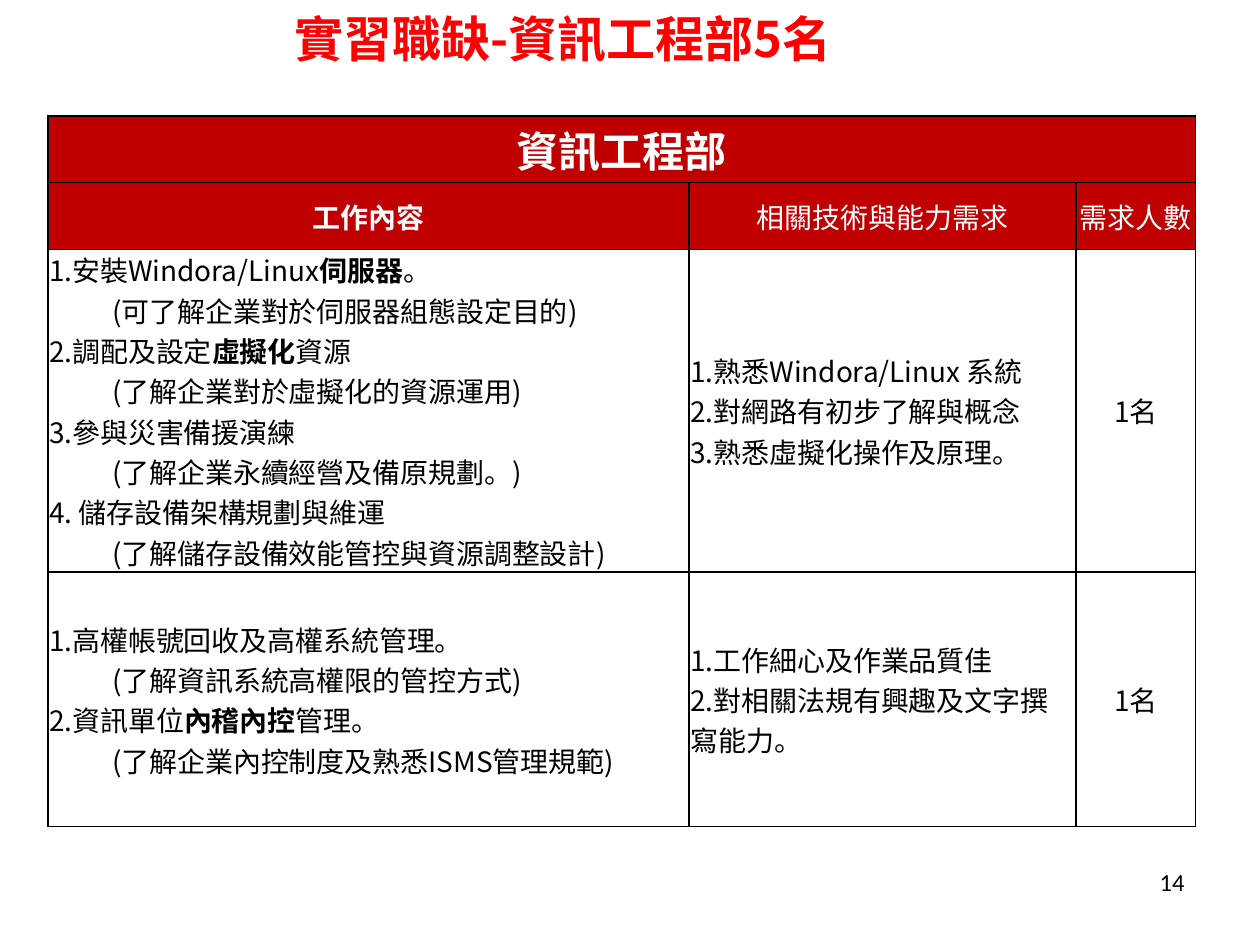
import pptx
import pptx.dml.color
import pptx.enum.text
import pptx.oxml
import pptx.oxml.ns
import pptx.util
from pptx.util import Inches

ALIGN = pptx.enum.text.PP_ALIGN
MIDDLE = pptx.enum.text.MSO_ANCHOR.MIDDLE

HEADERS = ["*工作內容*", "相關技術與能力需求", "需求人數"]
# Asterisks enclose bold words; a leading ">" marks an indented line.
JOBS = [
    (
        [
            "1.安裝Windora/Linux*伺服器*。",
            ">(可了解企業對於伺服器組態設定目的)",
            "2.調配及設定*虛擬化*資源",
            ">(了解企業對於虛擬化的資源運用)",
            "3.參與災害備援演練",
            ">(了解企業永續經營及備原規劃。)",
            "4. 儲存設備架構規劃與維運",
            ">(了解儲存設備效能管控與資源調整設計)",
        ],
        ["1.熟悉Windora/Linux 系統", "2.對網路有初步了解與概念", "3.熟悉虛擬化操作及原理。"],
        "1名",
    ),
    (
        [
            "1.高權帳號回收及高權系統管理。",
            ">(了解資訊系統高權限的管控方式)",
            "2.資訊單位*內稽內控*管理。",
            ">(了解企業內控制度及熟悉ISMS管理規範)",
        ],
        ["1.工作細心及作業品質佳", "2.對相關法規有興趣及文字撰寫能力。"],
        "1名",
    ),
]


def color(value):
    return pptx.dml.color.RGBColor.from_string(value)


class SlideBuilder:
    FONT = "Noto Sans CJK SC"
    RED, DARK_RED, BLACK, WHITE = "FF0000", "C00000", "000000", "FFFFFF"

    def __init__(self, presentation):
        self.slide = presentation.slides.add_slide(presentation.slide_layouts[5])

    def add_runs(self, paragraph, text, size, text_color, font=FONT):
        """Add runs, switching bold on and off at each asterisk."""
        for index, part in enumerate(text.split("*")):
            if not part:
                continue
            run = paragraph.add_run()
            run.text = part
            run.font.size = pptx.util.Pt(size)
            run.font.bold = index % 2 == 1
            run.font.name = font
            run.font.color.rgb = color(text_color)
            east_asian = pptx.oxml.parse_xml(
                f'<a:ea {pptx.oxml.ns.nsdecls("a")} typeface="{font}"/>')
            run.font._element.find(pptx.oxml.ns.qn("a:latin")).addnext(east_asian)

    def title(self, text, left, top, width, height):
        shape = self.slide.shapes.title
        shape.left, shape.top = Inches(left), Inches(top)
        shape.width, shape.height = Inches(width), Inches(height)
        shape.text_frame.vertical_anchor = MIDDLE
        paragraph = shape.text_frame.paragraphs[0]
        paragraph.alignment = ALIGN.LEFT
        self.add_runs(paragraph, text, 28, self.RED)

    def page_number(self, text, *box):
        shape = self.slide.shapes.add_textbox(*map(Inches, box))
        shape.text_frame.word_wrap = True
        paragraph = shape.text_frame.paragraphs[0]
        paragraph.alignment = ALIGN.RIGHT
        self.add_runs(paragraph, text, 14, self.BLACK, "Calibri")

    def table(self, left, top, widths, heights):
        table = self.slide.shapes.add_table(
            len(heights), len(widths), Inches(left), Inches(top),
            Inches(sum(widths)), Inches(sum(heights))).table
        table.first_row = table.horz_banding = False
        for column, width in zip(table.columns, widths):
            column.width = Inches(width)
        for row, height in zip(table.rows, heights):
            row.height = Inches(height)
        for cell in table.iter_cells():
            self.borders(cell)
            cell.fill.background()
        return table

    def borders(self, cell):
        properties = cell._tc.get_or_add_tcPr()
        for side in ("lnL", "lnR", "lnT", "lnB"):
            properties.append(pptx.oxml.parse_xml(
                f'<a:{side} {pptx.oxml.ns.nsdecls("a")} w="12700"><a:solidFill>'
                f'<a:srgbClr val="{self.BLACK}"/></a:solidFill></a:{side}>'))

    def cell(self, cell, lines, size=16, text_color=BLACK, fill=None,
             align=ALIGN.LEFT, margin=0.01):
        cell.vertical_anchor = MIDDLE
        cell.margin_left = cell.margin_right = Inches(margin)
        cell.margin_top = cell.margin_bottom = 0
        if fill:
            cell.fill.solid()
            cell.fill.fore_color.rgb = color(fill)
        frame = cell.text_frame
        for index, line in enumerate(lines):
            paragraph = frame.add_paragraph() if index else frame.paragraphs[0]
            paragraph.alignment = align
            if line.startswith(">"):
                paragraph.level = 1
                properties = paragraph._p.get_or_add_pPr()
                properties.set("marL", str(Inches(0.5)))
                properties.set("indent", "0")
            self.add_runs(paragraph, line.lstrip(">"), size, text_color)

    def header_cell(self, cell, text, size=16):
        self.cell(cell, [text], size, self.WHITE, self.DARK_RED, ALIGN.CENTER, 0.02)


def main():
    presentation = pptx.Presentation()
    presentation.slide_width, presentation.slide_height = Inches(10), Inches(7.5)
    builder = SlideBuilder(presentation)
    builder.title("*實習職缺-資訊工程部5名*", 2.24, 0, 7.48, 0.6)

    table = builder.table(0.38, 0.92, [5.09, 3.07, 0.95], [0.53, 0.53, 2.02, 2.02])
    table.cell(0, 0).merge(table.cell(0, 2))
    builder.header_cell(table.cell(0, 0), "*資訊工程部*", 24)
    for column, header in enumerate(HEADERS):
        builder.header_cell(table.cell(1, column), header)
    for row, (duties, skills, openings) in enumerate(JOBS, start=2):
        builder.cell(table.cell(row, 0), duties)
        builder.cell(table.cell(row, 1), skills)
        builder.cell(table.cell(row, 2), [openings], align=ALIGN.CENTER, margin=0.02)

    builder.page_number("14", 7.17, 6.83, 2.33, 0.52)
    presentation.save("out.pptx")


if __name__ == "__main__":
    main()
